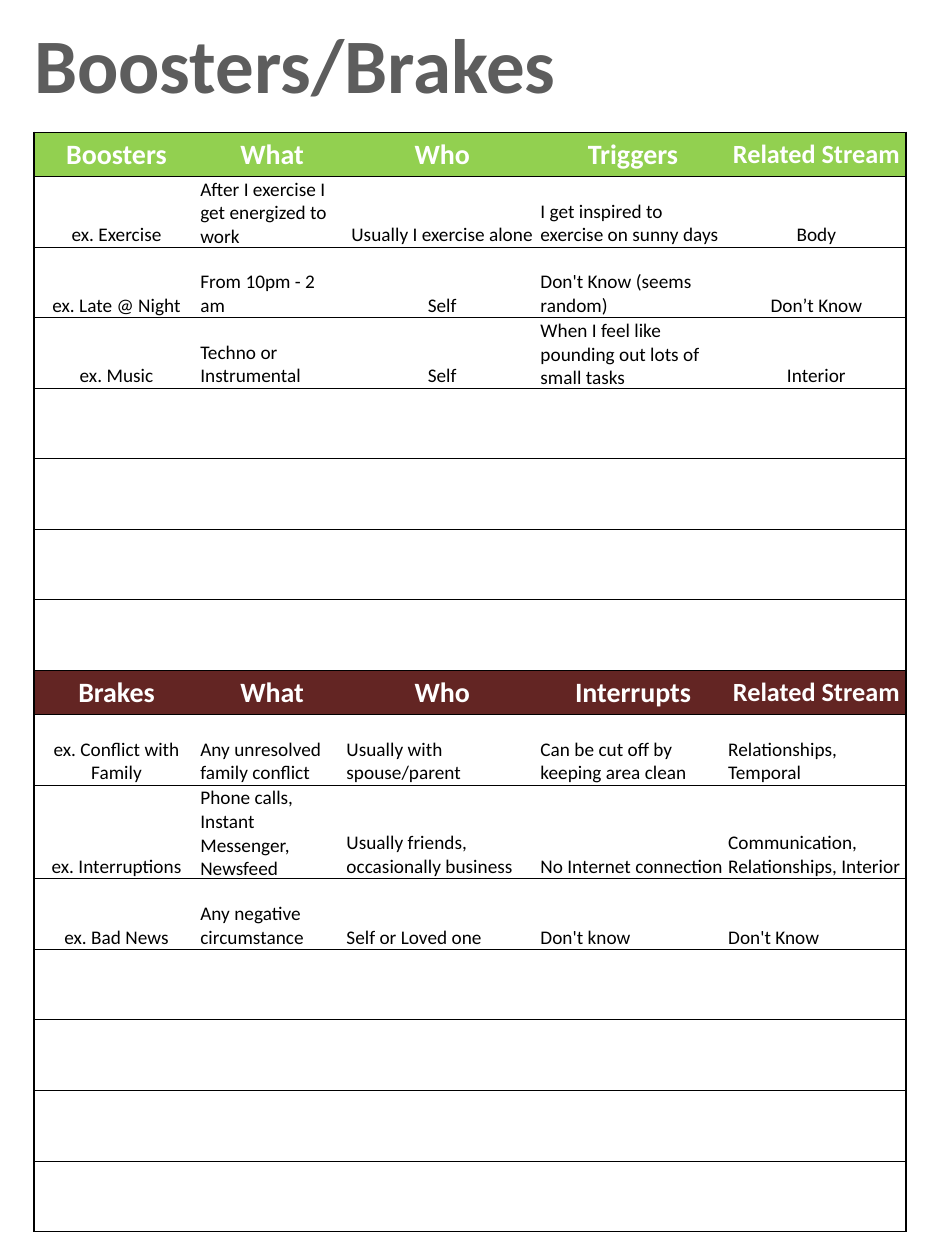
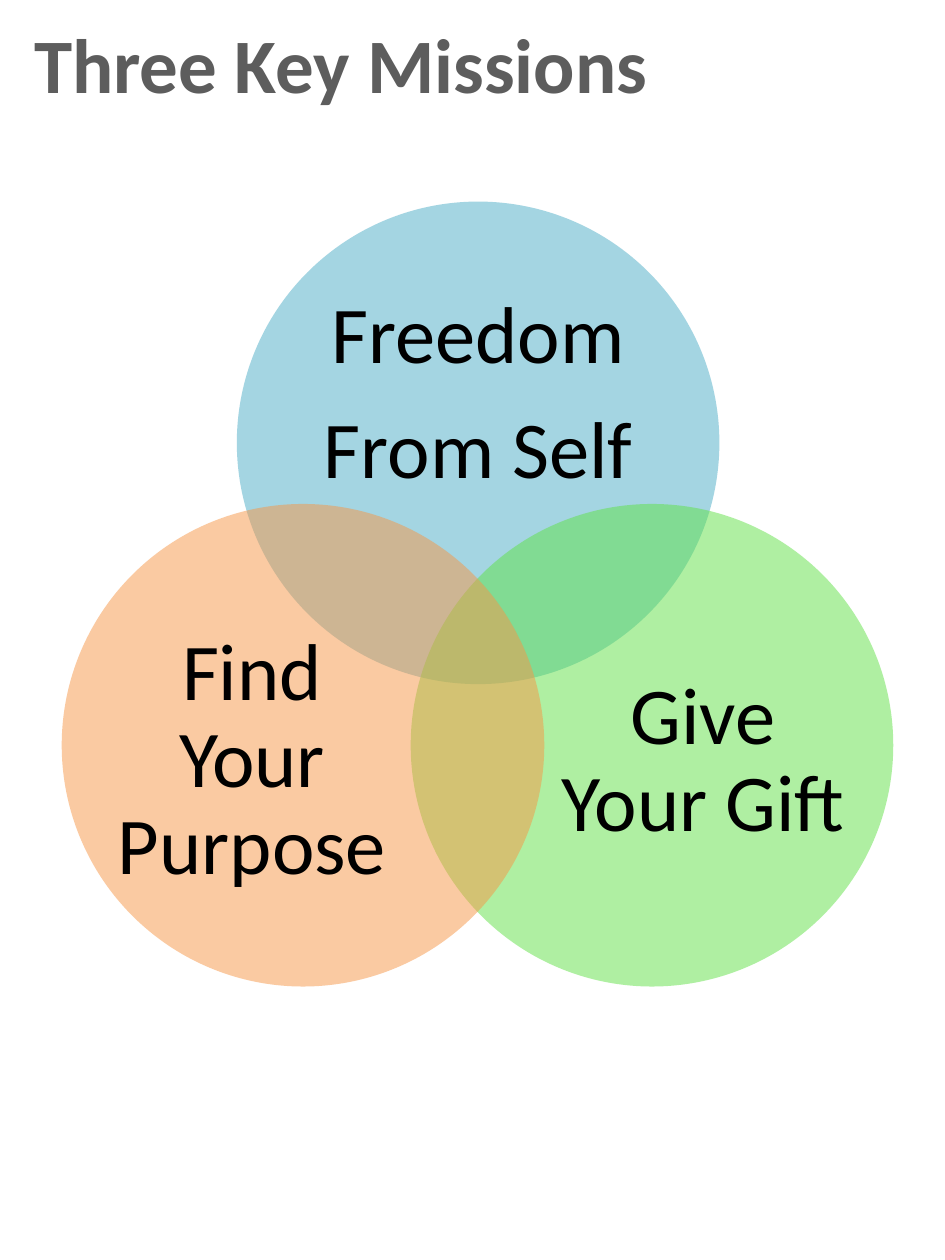
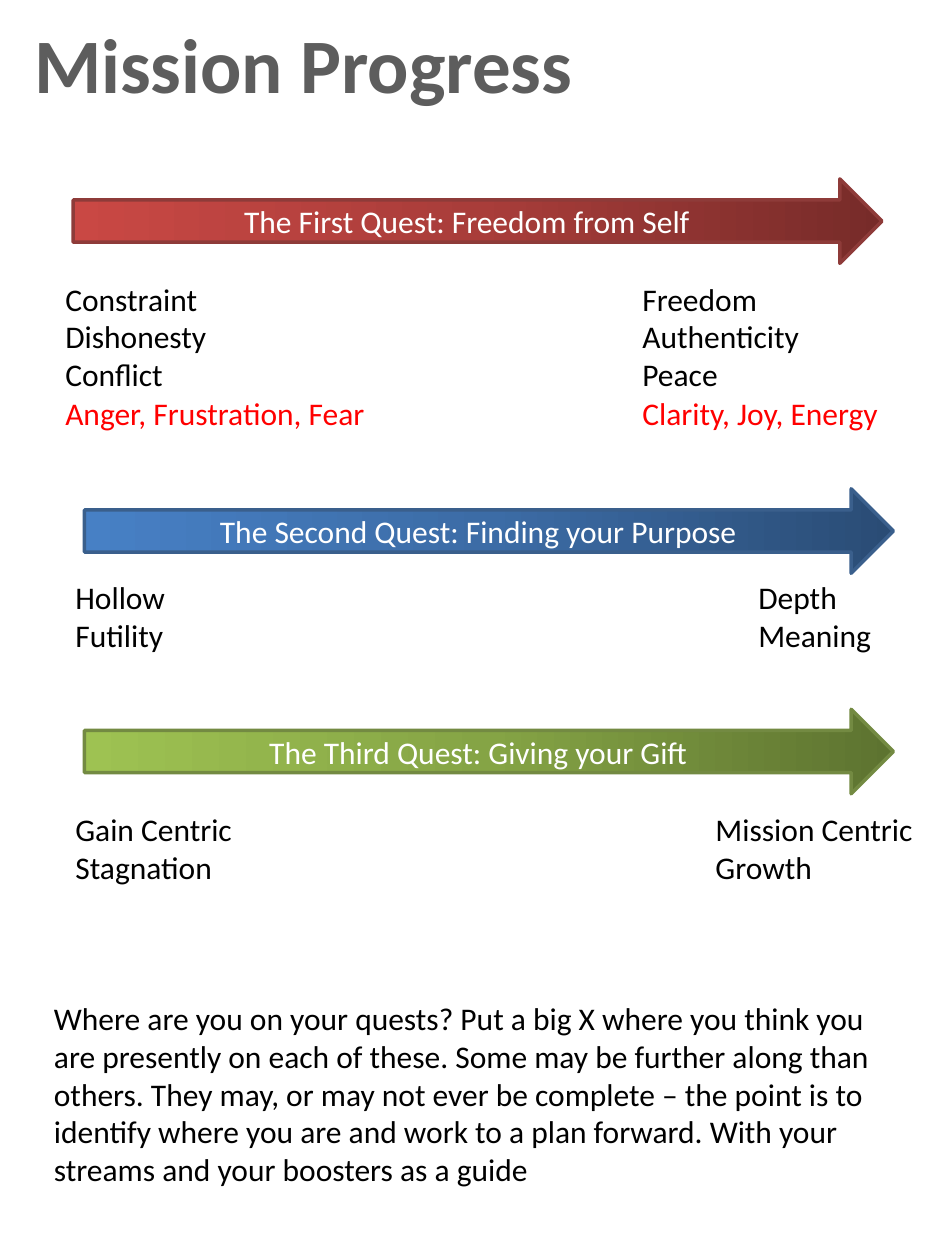
from copy import deepcopy

from lxml import etree
from pptx import Presentation
from pptx.dml.color import RGBColor
from pptx.enum.shapes import MSO_SHAPE
from pptx.enum.text import MSO_ANCHOR, MSO_AUTO_SIZE, PP_ALIGN
from pptx.oxml.ns import qn
from pptx.util import Inches, Pt

OVAL, ARROW = MSO_SHAPE.OVAL, MSO_SHAPE.RIGHT_ARROW
LEFT, MID = PP_ALIGN.LEFT, PP_ALIGN.CENTER
TOP, CENTER, BOTTOM = MSO_ANCHOR.TOP, MSO_ANCHOR.MIDDLE, MSO_ANCHOR.BOTTOM
GROW = MSO_AUTO_SIZE.SHAPE_TO_FIT_TEXT

FONT = "Calibri"
BLACK, WHITE, GREY, RED = "000000", "FFFFFF", "5D5D5D", "FF0000"
LIME, MAROON = "92D050", "632523"

COLS = [1.31, 1.16, 1.54, 1.49, 1.42]
HEAD, ROW, BLANKS = 0.35, 0.56, 4
BOOSTS = [
    ["Boosters", "What", "Who", "Triggers", "Related Stream"],
    ["ex. Exercise", "After I exercise I get energized to work",
     "Usually I exercise alone", "I get inspired to exercise on sunny days", "Body"],
    ["ex. Late @ Night", "From 10pm - 2 am", "Self", "Don't Know (seems random)", "Don’t Know"],
    ["ex. Music", "Techno or Instrumental", "Self",
     "When I feel like pounding out lots of small tasks", "Interior"],
]
BRAKES = [
    ["Brakes", "What", "Who", "Interrupts", "Related Stream"],
    ["ex. Conflict with Family", "Any unresolved family conflict", "Usually with spouse/parent",
     "Can be cut off by keeping area clean", "Relationships, Temporal"],
    ["ex. Interruptions", "Phone calls, Instant Messenger, Newsfeed",
     "Usually friends, occasionally business", "No Internet connection",
     "Communication, Relationships, Interior"],
    ["ex. Bad News", "Any negative circumstance", "Self or Loved one", "Don't know", "Don't Know"],
]
PARTS = [(BOOSTS, LIME, {0, 2, 4}), (BRAKES, MAROON, {0})]

DISC = 3.83
RINGS = [
    (1.39, 0, "4BACC6", ["Freedom", "From Self"], (0.51, 0.67, 2.81, 1.72)),
    (2.77, 2.4, "60E146", ["Give Your Gift"], (1.17, 0.99, 2.3, 2.11)),
    (0, 2.4, "F79646", ["Find Your Purpose"], (0.36, 0.99, 2.3, 2.11)),
]

QUESTS = [
    (0.58, 1.42, "The First Quest: Freedom from Self",
     ["772B29", "A93D3A", "C94844"], "8E3B39",
     [(0.42, 2.17, 1.33, ["Constraint", "Dishonesty", "Conflict"], BLACK),
      (5, 2.17, 1.46, ["Freedom", "Authenticity", "Peace"], BLACK),
      (0.42, 3.08, 2.6, ["Anger, Frustration, Fear"], RED),
      (5, 3.08, 2.09, ["Clarity, Joy, Energy"], RED)]),
    (0.67, 3.88, "The Second Quest: Finding your Purpose",
     ["2A4C75", "3C6CA6", "4780C5"], "3A5F8C",
     [(0.5, 4.54, 0.92, ["Hollow", "Futility"], BLACK),
      (5.92, 4.54, 1.11, ["Depth", "Meaning"], BLACK)]),
    (0.67, 5.63, "The Third Quest: Giving your Gift",
     ["5D7330", "85A445", "9EC252"], "738A42",
     [(0.5, 6.38, 1.46, ["Gain Centric", "Stagnation"], BLACK),
      (5.58, 6.38, 1.78, ["Mission Centric", "Growth"], BLACK)]),
]
GUIDE = ("Where are you on your quests? Put a big X where you think you are presently on each "
         "of these. Some may be further along than others. They may, or may not ever be complete "
         "– the point is to identify where you are and work to a plan forward. With your streams "
         "and your boosters as a guide")


def tint(code):
    """Turn a hex string into a colour."""
    return RGBColor.from_string(code)


def span(*sizes):
    """Turn inches into lengths."""
    return [Inches(size) for size in sizes]


def put(frame, lines, size=18, color=BLACK, bold=False, align=LEFT, gap=None, space=None):
    """Write lines as formatted paragraphs into a text frame."""
    for num, line in enumerate(lines):
        para = frame.add_paragraph() if num else frame.paragraphs[0]
        para.alignment, para.line_spacing, para.space_after = align, space, gap
        run = para.add_run()
        run.text = line
        font = run.font
        font.name, font.size, font.bold = FONT, Pt(size), bold
        font.color.rgb = tint(color)


def note(slide, box, lines, wrap=False, **form):
    """Add a text box that fits its text."""
    frame = slide.shapes.add_textbox(*span(*box)).text_frame
    frame.word_wrap, frame.auto_size = wrap, GROW
    put(frame, lines, **form)


def page(deck, title, width):
    """Add a slide with the shared title style."""
    slide = deck.slides.add_slide(deck.slide_layouts[5])
    head = slide.shapes.title
    head.left, head.top, head.width, head.height = span(0.17, 0.08, width, 0.84)
    frame = head.text_frame
    frame.word_wrap, frame.auto_size, frame.vertical_anchor = False, GROW, TOP
    put(frame, [title], size=44, color=GREY, bold=True)
    return slide


def edge(cell, widths):
    """Draw cell borders from left, right, top and bottom widths."""
    props = cell._tc.get_or_add_tcPr()
    for num, (side, width) in enumerate(zip("LRTB", widths)):
        line = etree.Element(qn(f"a:ln{side}"), w=str(Pt(width)))
        if width:
            fill = etree.SubElement(line, qn("a:solidFill"))
            etree.SubElement(fill, qn("a:srgbClr"), val=BLACK)
        else:
            etree.SubElement(line, qn("a:noFill"))
        props.insert(num, line)


def style(cell, fill):
    """Set the fill, margins and anchor of a cell."""
    cell.margin_left = cell.margin_right = cell.margin_top = Inches(0.01)
    cell.margin_bottom = 0
    cell.vertical_anchor = CENTER if fill else BOTTOM
    if fill:
        cell.fill.solid()
        cell.fill.fore_color.rgb = tint(fill)
    else:
        cell.fill.background()


def chart(slide, left, top):
    """Add the table of boosters and brakes."""
    rows = []
    for part, color, mids in PARTS:
        rows += [(row, None if num else color, mids) for num, row in enumerate(part)]
        rows += [([""] * len(COLS), None, mids)] * BLANKS
    highs = [HEAD if fill else ROW for _, fill, _ in rows]
    box = span(left, top, sum(COLS), sum(highs))
    table = slide.shapes.add_table(len(rows), len(COLS), *box).table
    table.first_row = table.horz_banding = False
    for col, width in zip(table.columns, COLS):
        col.width = Inches(width)
    ends = (0, len(COLS) - 1, 0, len(rows) - 1)
    for y, (row, fill, mids) in enumerate(rows):
        table.rows[y].height = Inches(highs[y])
        for x, text in enumerate(row):
            cell = table.cell(y, x)
            style(cell, fill)
            edge(cell, [1 if at == end else thin
                        for at, end, thin in zip((x, x, y, y), ends, (0, 0, 0.5, 0.5))])
            if fill:
                size = 15 if x == ends[1] else 16
                put(cell.text_frame, [text], size=size, color=WHITE, bold=True, align=MID)
            elif text:
                put(cell.text_frame, [text], size=11, align=MID if x in mids else LEFT)


def venn(slide, left, top):
    """Add three see-through discs, each with its label."""
    for x, y, color, lines, (dx, dy, wide, high) in RINGS:
        x, y = left + x, top + y
        disc = slide.shapes.add_shape(OVAL, *span(x, y, DISC, DISC))
        disc.shadow.inherit = False
        disc.line.fill.background()
        disc.fill.solid()
        disc.fill.fore_color.rgb = tint(color)
        shade = disc._element.spPr.find(".//" + qn("a:srgbClr"))
        etree.SubElement(shade, qn("a:alpha"), val="50000")
        frame = slide.shapes.add_textbox(*span(x + dx, y + dy, wide, high)).text_frame
        frame.margin_left = frame.margin_right = frame.margin_top = frame.margin_bottom = 0
        frame.word_wrap, frame.vertical_anchor = True, CENTER
        put(frame, lines, size=46, align=MID, gap=Pt(16), space=0.9)


def quest(slide, left, top, name, shades, rim, lists):
    """Add a quest arrow with the word lists at its two ends."""
    arrow = slide.shapes.add_shape(ARROW, *span(left, top, 6.42, 0.67))
    arrow.shadow.inherit = False
    arrow.line.color.rgb, arrow.line.width = tint(rim), Pt(2)
    fill = arrow.fill
    fill.gradient()
    fill.gradient_angle = 180
    stops = arrow._element.spPr.find(".//" + qn("a:gsLst"))
    stops.append(deepcopy(stops[0]))
    for stop, shade, spot in zip(fill.gradient_stops, shades, (0, 0.5, 1)):
        stop.color.rgb, stop.position = tint(shade), spot
    arrow.text_frame.vertical_anchor = CENTER
    put(arrow.text_frame, [name], color=WHITE, align=MID)
    for x, y, width, lines, color in lists:
        note(slide, (x, y, width, 0.1 + 0.3 * len(lines)), lines, color=color)


def main():
    """Build the three slides and save them."""
    deck = Presentation()
    deck.slide_width, deck.slide_height = span(7.5, 10)
    chart(page(deck, "Boosters/Brakes", 4.38), 0.27, 1.05)
    venn(page(deck, "Three Key Missions", 5.12), 0.49, 1.6)
    slide = page(deck, "Mission Progress", 4.51)
    for item in QUESTS:
        quest(slide, *item)
    note(slide, (0.33, 7.88, 7, 1.62), [GUIDE], wrap=True)
    deck.save("out.pptx")


if __name__ == "__main__":
    main()
